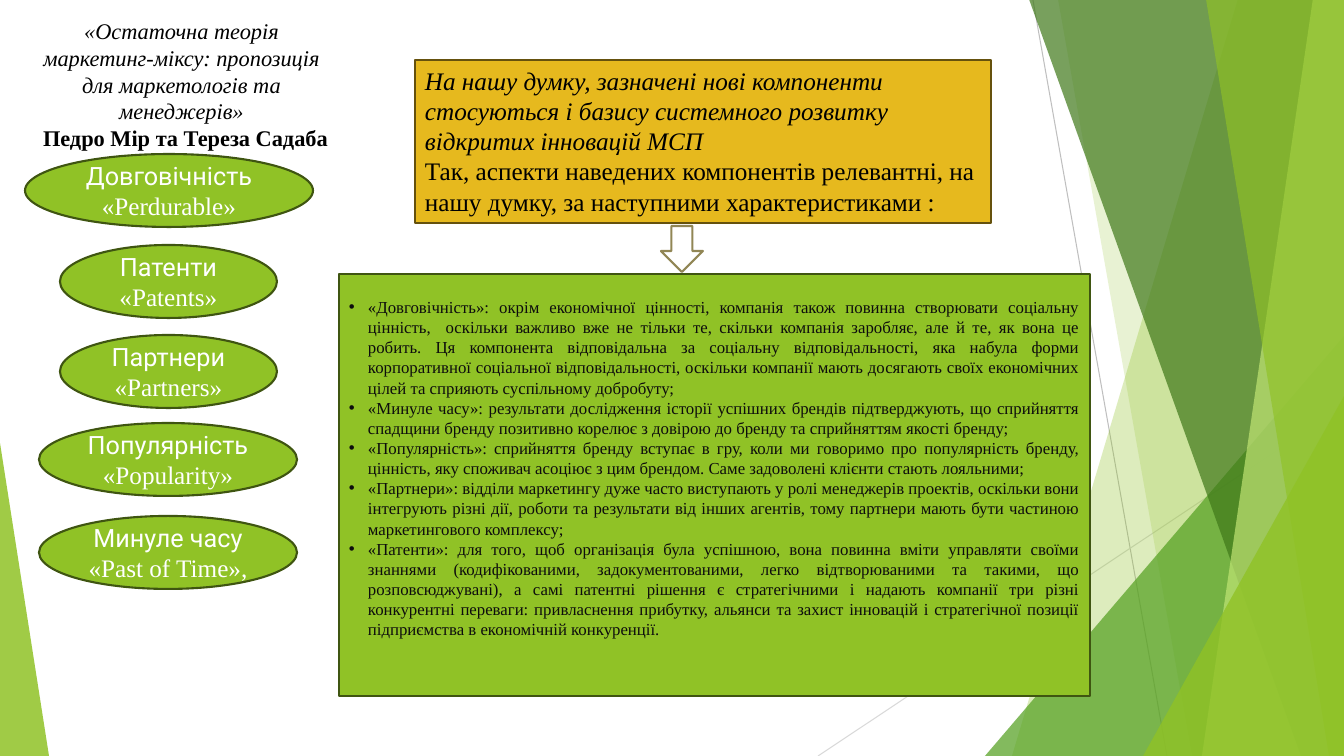
from lxml.etree import SubElement
from pptx import Presentation
from pptx.dml.color import RGBColor
from pptx.enum.shapes import MSO_CONNECTOR, MSO_SHAPE
from pptx.enum.text import MSO_ANCHOR, MSO_AUTO_SIZE, PP_ALIGN
from pptx.oxml.ns import qn
from pptx.util import Pt

WIDTH, HEIGHT = 1344, 756
SCALE = 12192000 / WIDTH
GREEN, DARK_GREEN = "90C226", "3F5511"


def px(n):
    return round(n * SCALE)


def rgb(color):
    return RGBColor.from_string(color)


class SlideBuilder:
    serif = "Times New Roman"
    sans = "Roboto"

    def __init__(self, prs):
        self.s = prs.slides.add_slide(prs.slide_layouts[1])

    def paint(self, sp, fill, line=None, opacity=100):
        sp.fill.solid()
        sp.fill.fore_color.rgb = rgb(fill)
        if opacity < 100:
            clr = sp._element.spPr.find(qn("a:solidFill"))[0]
            SubElement(clr, qn("a:alpha")).set("val", str(opacity * 1000))
        if line:
            sp.line.color.rgb = rgb(line)
            sp.line.width = Pt(1.5)
        else:
            sp.line.fill.background()

    def line(self, x1, y1, x2, y2, color):
        c = self.s.shapes.add_connector(
            MSO_CONNECTOR.STRAIGHT, px(x1), px(y1), px(x2), px(y2))
        c.line.color.rgb = rgb(color)
        c.line.width = Pt(0.75)
        SubElement(c._element.spPr, qn("a:effectLst"))

    def band(self, top_x, bottom_x, fill, opacity):
        """Slanted band reaching from its left edge to the slide's right edge."""
        fb = self.s.shapes.build_freeform(top_x, -1, scale=SCALE)
        fb.add_line_segments([(WIDTH, -1), (WIDTH, HEIGHT), (bottom_x, HEIGHT)])
        sp = fb.convert_to_shape()
        sp.shadow.inherit = False
        self.paint(sp, fill, opacity=opacity)

    def shape(self, kind, box, fill, line=None, opacity=100):
        sp = self.s.shapes.add_shape(kind, *map(px, box))
        sp.shadow.inherit = False
        self.paint(sp, fill, line, opacity)
        return sp

    def triangle(self, box, apex, fill, opacity):
        sp = self.shape(MSO_SHAPE.ISOSCELES_TRIANGLE, box, fill, opacity=opacity)
        sp.adjustments[0] = apex

    def placeholder(self, idx, box):
        """Move a template placeholder to the box and to the front."""
        sp = self.s.placeholders[idx]
        sp.left, sp.top, sp.width, sp.height = map(px, box)
        self.s.shapes._spTree.append(sp._element)
        return sp

    def text(self, sp, lines, size, color, align, anchor, margins=(10, 5, 10, 5)):
        tf = sp.text_frame
        tf.text = "\n".join(lines)
        tf.word_wrap = True
        tf.auto_size = MSO_AUTO_SIZE.NONE
        tf.vertical_anchor = anchor
        (tf.margin_left, tf.margin_top,
         tf.margin_right, tf.margin_bottom) = map(px, margins)
        for p in tf.paragraphs:
            p.alignment = align
            p.space_before = p.space_after = Pt(0)
            for r in p.runs:
                r.font.name, r.font.size = self.serif, Pt(size)
                r.font.color.rgb = rgb(color)
        return tf.paragraphs

    def bullets(self, paragraphs, indent):
        for p in paragraphs:
            pPr = p._p.get_or_add_pPr()
            pPr.set("marL", str(px(indent)))
            pPr.set("indent", str(-px(indent)))
            SubElement(pPr, qn("a:buFont")).set("typeface", "Arial")
            SubElement(pPr, qn("a:buChar")).set("char", "•")

    def component(self, box, name, term):
        sp = self.shape(MSO_SHAPE.OVAL, box, GREEN, DARK_GREEN)
        paragraphs = self.text(sp, [name, term], 18, "FFFFFF", PP_ALIGN.CENTER,
                               MSO_ANCHOR.MIDDLE, (0, 0, 0, 0))
        paragraphs[0].runs[0].font.name = self.sans


COMPONENTS = [
    ((25, 154, 288, 73), "Довговічність", "«Perdurable»"),
    ((60, 245, 217, 73), "Патенти", "«Patents»"),
    ((60, 335, 217, 73), "Партнери", "«Partners»"),
    ((39, 423, 258, 73), "Популярність", "«Popularity»"),
    ((39, 516, 258, 73), "Минуле часу", "«Past of Time»,"),
]

HEADING = [
    "«Остаточна теорія маркетинг-міксу: пропозиція для маркетологів та менеджерів»",
    "Педро Мір та Тереза Садаба",
]

OPINION = [
    "На нашу думку, зазначені нові компоненти стосуються і базису системного "
    "розвитку відкритих інновацій МСП",
    "Так, аспекти наведених компонентів релевантні, на нашу думку, за наступними "
    "характеристиками :",
]

CHARACTERISTICS = [
    "«Довговічність»: окрім економічної цінності, компанія також повинна створювати "
    "соціальну цінність,  оскільки важливо вже не тільки те, скільки компанія "
    "заробляє, але й те, як вона це робить. Ця компонента відповідальна за соціальну "
    "відповідальності, яка набула форми корпоративної соціальної відповідальності, "
    "оскільки компанії мають досягають своїх економічних цілей та сприяють "
    "суспільному добробуту;",
    "«Минуле часу»: результати дослідження історії успішних брендів підтверджують, "
    "що сприйняття спадщини бренду позитивно корелює з довірою до бренду та "
    "сприйняттям якості бренду;",
    "«Популярність»: сприйняття бренду вступає в гру, коли ми говоримо про "
    "популярність бренду, цінність, яку споживач асоціює з цим брендом. Саме "
    "задоволені клієнти стають лояльними;",
    "«Партнери»: відділи маркетингу дуже часто виступають у ролі менеджерів проектів, "
    "оскільки вони інтегрують різні дії, роботи та результати від інших агентів, "
    "тому партнери мають бути частиною маркетингового комплексу;",
    "«Патенти»: для того, щоб організація була успішною, вона повинна вміти управляти "
    "своїми знаннями (кодифікованими, задокументованими, легко відтворюваними та "
    "такими, що розповсюджувані), а самі патентні рішення є стратегічними і надають "
    "компанії три різні конкурентні переваги: привласнення прибутку, альянси та "
    "захист інновацій і стратегічної позиції підприємства в економічній конкуренції.",
]


def main():
    prs = Presentation()
    prs.slide_width, prs.slide_height = px(WIDTH), px(HEIGHT)
    b = SlideBuilder(prs)

    # Background facets
    b.line(1033, 0, 1167, HEIGHT, "BFBFBF")
    b.line(WIDTH, 406, 818, HEIGHT, "D9D9D9")
    b.band(1238, 1012, GREEN, 30)
    b.band(1058, 1192, GREEN, 20)
    b.triangle((985, 336, 359, 420), 1, "54A021", 72)
    b.band(1029, 1301, "3F7819", 70)
    b.band(1313, 1202, "C0E474", 70)
    b.band(1206, 1329, GREEN, 65)
    b.triangle((1143, 396, 201, 360), 1, GREEN, 80)
    b.triangle((0, 443, 49, 313), 0, GREEN, 85)

    # Heading with its authors
    title = b.placeholder(0, (25, 12, 313, 146))
    quote, authors = b.text(title, HEADING, 16, "000000", PP_ALIGN.CENTER,
                            MSO_ANCHOR.TOP)
    quote.runs[0].font.italic = True
    authors.runs[0].font.bold = True
    authors.alignment = PP_ALIGN.RIGHT

    # Components of the mix
    for component in COMPONENTS:
        b.component(*component)

    # Opinion box and arrow
    box = b.shape(MSO_SHAPE.RECTANGLE, (415, 60, 576, 163), "E6B91E", "65510D")
    opinion = b.text(box, OPINION, 18, "000000", PP_ALIGN.LEFT, MSO_ANCHOR.TOP)
    opinion[0].runs[0].font.italic = True
    b.shape(MSO_SHAPE.DOWN_ARROW, (661, 226, 42, 46), "FFFFFF", "918655")

    # Characteristics list
    body = b.placeholder(1, (339, 274, 751, 422))
    b.paint(body, GREEN, DARK_GREEN)
    items = b.text(body, CHARACTERISTICS, 12, "0D0D0D", PP_ALIGN.JUSTIFY,
                   MSO_ANCHOR.MIDDLE, (10, 5, 10, 39))
    b.bullets(items, 19)

    prs.save("out.pptx")


if __name__ == "__main__":
    main()
